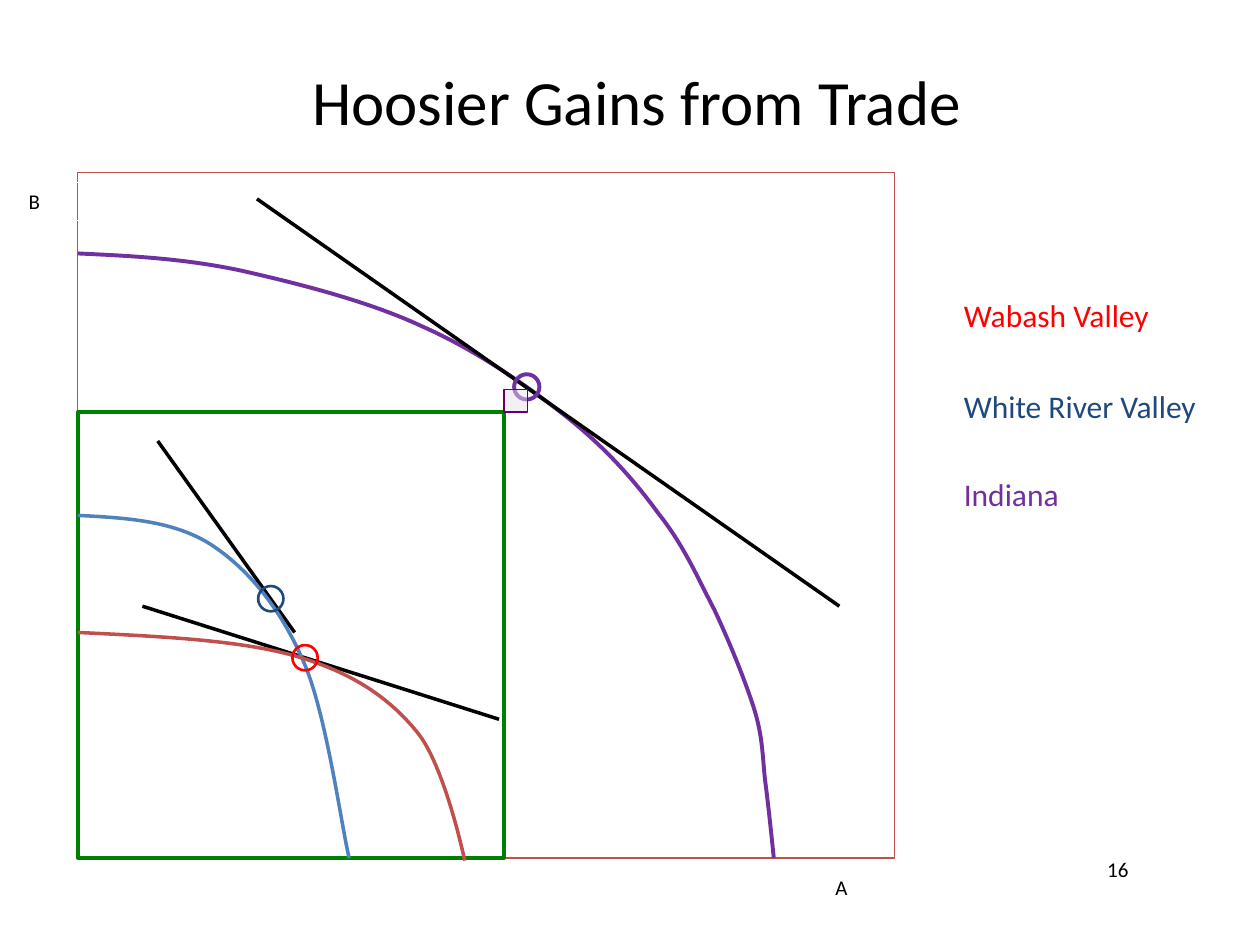
from lxml import etree
from pptx import Presentation
from pptx.dml.color import RGBColor
from pptx.enum.shapes import MSO_CONNECTOR, MSO_SHAPE
from pptx.enum.text import MSO_ANCHOR, PP_ALIGN
from pptx.oxml.ns import qn
from pptx.util import Cm, Pt

RECTANGLE, OVAL = MSO_SHAPE.RECTANGLE, MSO_SHAPE.OVAL
STRAIGHT = MSO_CONNECTOR.STRAIGHT
LEFT, CENTER = PP_ALIGN.LEFT, PP_ALIGN.CENTER
TOP, MIDDLE = MSO_ANCHOR.TOP, MSO_ANCHOR.MIDDLE

TITLE = "Hoosier Gains from Trade"
ORIGIN_X, ORIGIN_Y = 1.57, 17.3
STATE_SIZE = (16.46, 13.82)
VALLEY_SIZE = (8.59, 8.99)
TRADE_GAP = (10.16, 7.85, 0.48, 0.46)
POINT_DIAMETER = 0.51

LEGEND = [
    ("Wabash Valley", "FF0000", 5.84),
    ("White River Valley", "1F497D", 7.67),
    ("Indiana", "7030A0", 9.45),
]
AXIS_LABELS = [("B", (0.33, 3.68, 1.45, 0.76)), ("A", (16.59, 17.5, 1.22, 0.76))]
PAGE_NUMBER = ("16", (22.07, 17.15, 1.42, 0.76))

VALLEY_PRICES = [(2.87, 12.22, 10.06, 14.5), (3.18, 8.89, 5.94, 12.75)]
STATE_PRICE = (5.18, 4.01, 16.92, 12.22)
FRONTIERS = [
    ("4F81BD", 2, [
        (1.57, 10.39), (2.51, 10.44), (3.48, 10.49), (4.24, 10.97),
        (5, 11.46), (5.66, 12.27), (6.12, 13.34),
        (6.58, 14.38), (6.88, 16.64), (7.04, 17.3)]),
    ("C0504D", 2, [
        (1.57, 12.75), (3.2, 12.83), (4.83, 12.9), (5.97, 13.23),
        (7.11, 13.56), (7.85, 14.07), (8.41, 14.76),
        (8.97, 15.44), (9.37, 17.35), (9.37, 17.35)]),
    ("7030A0", 2.25, [
        (1.57, 5.11), (2.64, 5.16), (3.71, 5.21), (4.88, 5.46),
        (6.02, 5.72), (7.42, 6.07), (8.51, 6.58),
        (9.6, 7.06), (10.62, 7.77), (11.43, 8.41),
        (12.22, 9.04), (12.8, 9.7), (13.28, 10.36),
        (13.79, 11), (14.07, 11.66), (14.4, 12.29),
        (14.71, 12.95), (15.01, 13.69), (15.19, 14.25),
        (15.37, 14.81), (15.37, 15.19), (15.42, 15.7),
        (15.49, 16.21), (15.6, 17.3), (15.6, 17.3)]),
]
OUTPUT_POINTS = [
    ("FF0000", 1.5, 6.15, 13.26),
    ("1F497D", 1.5, 5.46, 12.07),
    ("7030A0", 2.25, 10.62, 7.8),
]


def paint(colour_format, colour):
    colour_format.rgb = RGBColor.from_string(colour)


def set_outline(shape, colour, width):
    paint(shape.line.color, colour)
    shape.line.width = Pt(width)


def add_outlined(slide, kind, box, colour, width):
    shape = slide.shapes.add_shape(kind, *map(Cm, box))
    shape.shadow.inherit = False
    shape.fill.background()
    set_outline(shape, colour, width)
    return shape


def write(shape, text, size, colour="000000", align=LEFT, anchor=TOP):
    frame = shape.text_frame
    frame.text = text
    frame.word_wrap = True
    frame.vertical_anchor = anchor
    paragraph = frame.paragraphs[0]
    paragraph.alignment = align
    font = paragraph.runs[0].font
    font.name, font.size = "Calibri", Pt(size)
    paint(font.color, colour)


def add_text(slide, text, box, size, colour="000000"):
    write(slide.shapes.add_textbox(*map(Cm, box)), text, size, colour)


def add_price_line(slide, ends):
    price_line = slide.shapes.add_connector(STRAIGHT, *map(Cm, ends))
    set_outline(price_line, "000000", 2)
    etree.SubElement(price_line.line._get_or_add_ln().getparent(), qn("a:effectLst"))


def add_frontier(slide, colour, width, points):
    start, *controls = [(Cm(x), Cm(y)) for x, y in points]
    builder = slide.shapes.build_freeform(*start)
    builder.add_line_segments(controls, close=False)
    frontier = builder.convert_to_shape()
    frontier.shadow.inherit = False
    frontier.fill.background()
    set_outline(frontier, colour, width)
    segments = list(frontier._element.iter(qn("a:lnTo")))
    for first in range(0, len(segments), 3):
        curve = etree.SubElement(segments[first].getparent(), qn("a:cubicBezTo"))
        for segment in segments[first:first + 3]:
            curve.append(segment[0])
            segment.getparent().remove(segment)


def add_economy(slide, size, colour, width):
    box = (ORIGIN_X, ORIGIN_Y - size[1], *size)
    add_outlined(slide, RECTANGLE, box, colour, width)


def main():
    """Build the slide on regional production frontiers and gains from trade."""
    deck = Presentation()
    deck.slide_width, deck.slide_height = Cm(25.4), Cm(19.05)
    slide = deck.slides.add_slide(deck.slide_layouts[5])

    title = slide.shapes.title
    title.left, title.top, title.width, title.height = map(Cm, (2.44, 1.12, 20.78, 1.8))
    write(title, TITLE, 36, align=CENTER, anchor=MIDDLE)

    for ends in VALLEY_PRICES:
        add_price_line(slide, ends)
    add_economy(slide, STATE_SIZE, "C0504D", 0.75)
    add_economy(slide, VALLEY_SIZE, "008000", 2)
    for colour, width, points in FRONTIERS:
        add_frontier(slide, colour, width, points)
    add_price_line(slide, STATE_PRICE)

    for colour, width, x, y in OUTPUT_POINTS:
        radius = POINT_DIAMETER / 2
        box = (x - radius, y - radius, POINT_DIAMETER, POINT_DIAMETER)
        add_outlined(slide, OVAL, box, colour, width)

    trade_gap = add_outlined(slide, RECTANGLE, TRADE_GAP, "660066", 0.75)
    trade_gap.fill.solid()
    paint(trade_gap.fill.fore_color, "E6E0EC")
    tint = next(trade_gap._element.spPr.iter(qn("a:srgbClr")))
    etree.SubElement(tint, qn("a:alpha"), val="49000")

    for label, box in AXIS_LABELS:
        write(add_outlined(slide, RECTANGLE, box, "FFFFFF", 0.75), label, 12)
    for region, colour, top in LEGEND:
        add_text(slide, region, (19.18, top, 5.44, 1.07), 18, colour)
    add_text(slide, *PAGE_NUMBER, 12)

    deck.save("out.pptx")


if __name__ == "__main__":
    main()
